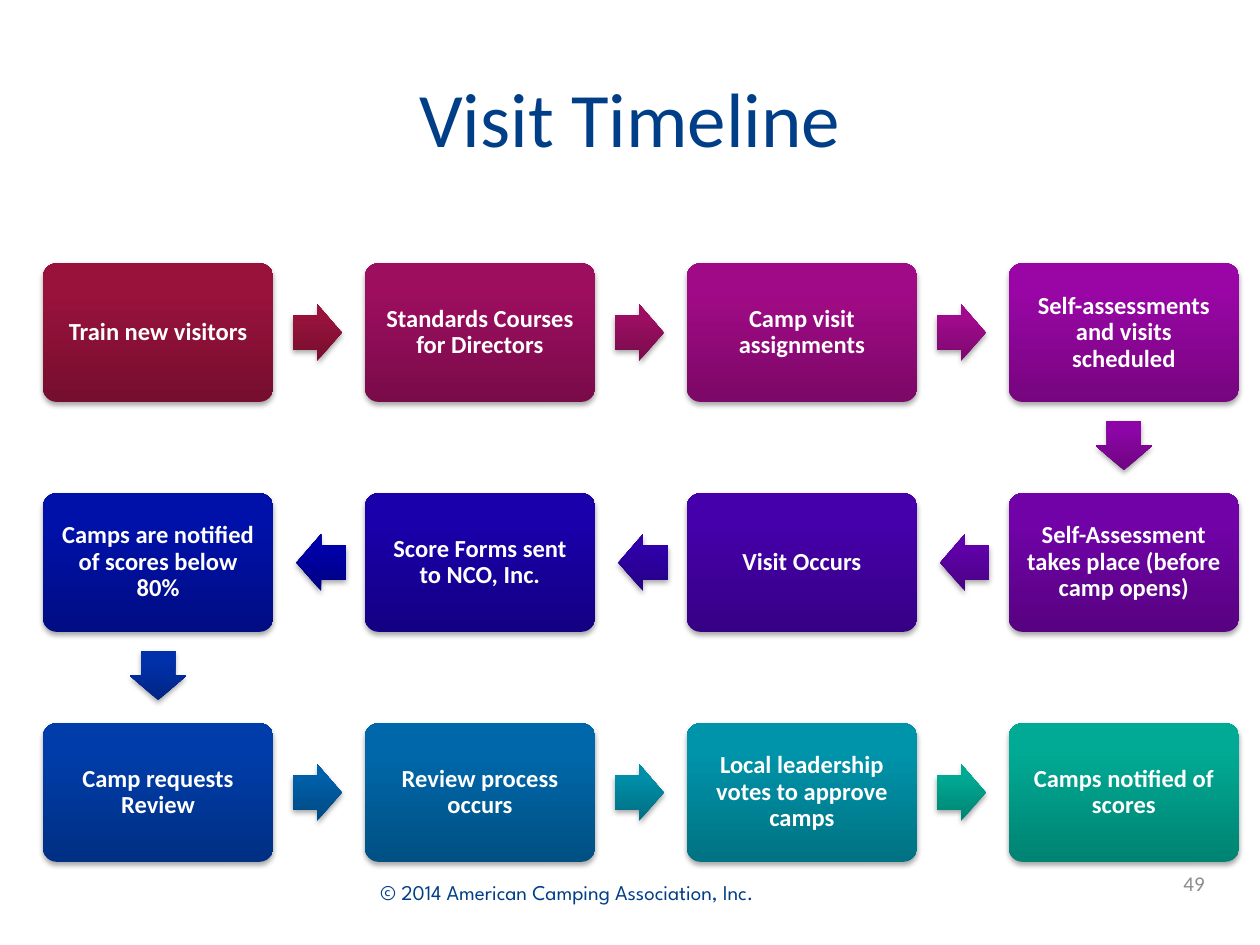
"""Builds the Visit Timeline slide: twelve steps in a winding path."""
import pptx
import pptx.dml.color
import pptx.enum.shapes
import pptx.enum.text
import pptx.oxml
import pptx.oxml.ns
import pptx.util

KIND = pptx.enum.shapes.MSO_SHAPE
ALIGN = pptx.enum.text.PP_ALIGN
NS = pptx.oxml.ns.nsdecls("a")
HUES = {
    "navy": "003F87", "white": "FFFFFF", "grey": "8C8C8C", "black": "000000",
    "train": "99123C", "train go": "99123C",
    "course": "9D0E5F", "course go": "9D0E63",
    "assign": "A10A86", "assign go": "A20A8E",
    "plan": "9906A5", "plan go": "8D05A6",
    "assess": "7102A8", "assess go": "6001AA",
    "visit": "4600AB", "visit go": "3000AB",
    "forms": "1A00AA", "forms go": "0000AA",
    "low": "0011AA", "low go": "0030AA",
    "request": "003DAA", "request go": "0060AA",
    "review": "0068AA", "review go": "008FAA",
    "vote": "0094AA", "vote go": "00AA94",
    "scores": "00AA94",
}
STEPS = [
    ("train", "Train new visitors"),
    ("course", "Standards Courses for Directors"),
    ("assign", "Camp visit assignments"),
    ("plan", "Self-assessments and visits scheduled"),
    ("assess", "Self-Assessment takes place (before camp opens)"),
    ("visit", "Visit Occurs"),
    ("forms", "Score Forms sent to NCO, Inc."),
    ("low", "Camps are notified of scores below 80%"),
    ("request", "Camp requests Review"),
    ("review", "Review process occurs"),
    ("vote", "Local leadership votes to approve camps"),
    ("scores", "Camps notified of scores"),
]
COLS = 4
BOX = (7.32, 4.4)
ARROW = (1.56, 1.8)
START = (1.36, 8.36)
PITCH = (10.22, 7.3)
NUDGE = 0.06
TURNS = {(1, 0): 0, (0, 1): 90, (-1, 0): 180}


class Board:
    """Holds the style and the slide, laid on a grid of 40 columns and 30 rows."""

    def __init__(self, deck):
        self.face = "Calibri"
        self.unit = deck.slide_width / 40
        self.slide = deck.slides.add_slide(deck.slide_layouts[5])

    def frame(self, *sides):
        return [pptx.util.Emu(round(side * self.unit)) for side in sides]

    def letter(self, shape, words, size, hue, align, bold=False, face=None):
        text = shape.text_frame
        text.word_wrap = True
        text.vertical_anchor = pptx.enum.text.MSO_ANCHOR.MIDDLE
        para = text.paragraphs[0]
        para.alignment = align
        run = para.add_run()
        run.text = words
        run.font.name = face or self.face
        run.font.size = pptx.util.Pt(size)
        run.font.bold = bold
        run.font.color.rgb = pptx.dml.color.RGBColor.from_string(HUES[hue])
        return text

    def title(self, words, *sides):
        shape = self.slide.shapes.title
        shape.left, shape.top, shape.width, shape.height = self.frame(*sides)
        self.letter(shape, words, 44, "navy", ALIGN.CENTER)

    def label(self, words, hue, align, *sides, face=None):
        shape = self.slide.shapes.add_textbox(*self.frame(*sides))
        self.letter(shape, words, 12, hue, align, face=face)

    def shade(self, shape, hue):
        tone = HUES[hue]
        dark = "".join(f"{round(int(tone[i:i + 2], 16) * 0.77):02X}" for i in (0, 2, 4))
        stops = "".join(
            f'<a:gs pos="{spot}"><a:srgbClr val="{shade}"/></a:gs>'
            for spot, shade in ((0, dark), (80000, tone), (100000, tone))
        )
        parts = (
            f'<a:gradFill {NS} rotWithShape="0"><a:gsLst>{stops}</a:gsLst>'
            '<a:lin ang="16200000" scaled="0"/></a:gradFill>',
            f"<a:ln {NS}><a:noFill/></a:ln>",
            f'<a:effectLst {NS}><a:outerShdw blurRad="40000" dist="23000" dir="5400000" '
            f'rotWithShape="0"><a:srgbClr val="{HUES["black"]}"><a:alpha val="35000"/>'
            "</a:srgbClr></a:outerShdw></a:effectLst>",
        )
        for part in parts:
            shape._element.spPr.append(pptx.oxml.parse_xml(part))

    def box(self, words, hue, mid):
        shape = self.shape(KIND.ROUNDED_RECTANGLE, mid, BOX, hue)
        shape.adjustments[0] = 0.1
        text = self.letter(shape, words, 14, "white", ALIGN.CENTER, bold=True)
        text.margin_left = text.margin_right = pptx.util.Inches(0.09)
        text.margin_top = text.margin_bottom = pptx.util.Inches(0.09)
        text.paragraphs[0].line_spacing = 0.9

    def arrow(self, hue, mid, turn):
        shape = self.shape(KIND.RIGHT_ARROW, mid, ARROW, hue)
        shape.adjustments[0] = 0.6
        shape.adjustments[1] = 0.5
        shape.rotation = turn

    def shape(self, kind, mid, size, hue):
        corner = [place - side / 2 for place, side in zip(mid, size)]
        shape = self.slide.shapes.add_shape(kind, *self.frame(*corner, *size))
        self.shade(shape, hue)
        return shape


def cell(step):
    row, col = divmod(step, COLS)
    return (COLS - 1 - col if row % 2 else col), row


def centre(spot):
    return [first + pos * gap + side / 2
            for first, pos, gap, side in zip(START, spot, PITCH, BOX)]


def main():
    deck = pptx.Presentation()
    deck.slide_width = pptx.util.Inches(10)
    deck.slide_height = pptx.util.Inches(7.5)
    board = Board(deck)
    board.title("Visit Timeline", 2, 1.2, 36, 5)
    for step, (key, words) in enumerate(STEPS):
        here = cell(step)
        board.box(words, key, centre(here))
        if step + 1 < len(STEPS):
            there = cell(step + 1)
            way = tuple(b - a for a, b in zip(here, there))
            mid = [(a + b) / 2 - NUDGE * move
                   for a, b, move in zip(centre(here), centre(there), way)]
            board.arrow(f"{key} go", mid, TURNS[way])
    board.label("© 2014 American Camping Association, Inc.", "navy", ALIGN.LEFT,
                11.68, 27.32, 17, 2, face="League Spartan")
    board.label("49", "grey", ALIGN.RIGHT, 29.32, 27, 9.32, 2.04)
    deck.save("out.pptx")


if __name__ == "__main__":
    main()
